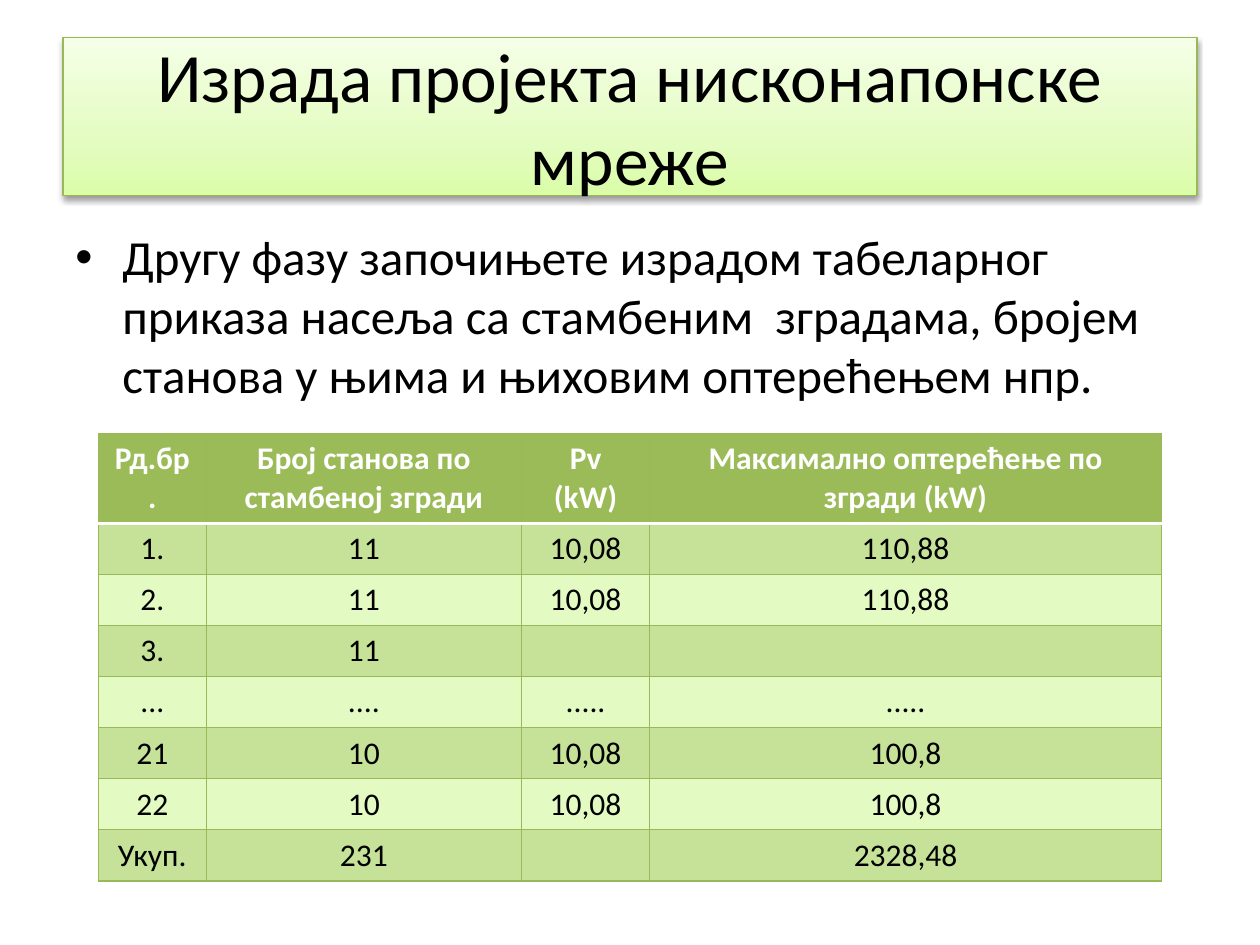
import pptx
import pptx.util
import pptx.oxml
import pptx.dml.color
import pptx.enum.text
import pptx.enum.shapes
from pptx.oxml.ns import nsdecls

Cm, Pt = pptx.util.Cm, pptx.util.Pt
CENTER = pptx.enum.text.PP_ALIGN.CENTER

TITLE = "Израда пројекта нисконапонске мреже"
BODY = ("Другу фазу започињете израдом табеларног приказа насеља са стамбеним  "
        "зградама, бројем станова у њима и њиховим оптерећењем нпр.")
ROWS = [
    ("Рд.бр.", "Број станова по стамбеној згради", "Pv\n(kW)",
     "Максимално оптерећење по згради (kW)"),
    ("1.", "11", "10,08", "110,88"),
    ("2.", "11", "10,08", "110,88"),
    ("3.", "11", "", ""),
    ("...", "....", ".....", "....."),
    ("21", "10", "10,08", "100,8"),
    ("22", "10", "10,08", "100,8"),
    ("Укуп.", "231", "", "2328,48"),
]
COL_WIDTHS = [2.18, 6.35, 2.59, 10.31]
HEADER_HEIGHT, ROW_HEIGHT = 1.81, 1.03

COLORS = {"text": "000000", "white": "FFFFFF", "header": "9BBB59", "line": "98B955",
          "band": "C6E198", "plain": "E3FBC2"}
TITLE_STOPS = [(0, "DAFDA7"), (35, "E4FCC2"), (100, "F5FFE7")]


def rgb(name):
    return pptx.dml.color.RGBColor.from_string(COLORS[name])


def xml(text):
    """Parse one DrawingML element given without its namespace declaration."""
    tag, rest = text.split(" ", 1)
    return pptx.oxml.parse_xml(f"{tag} {nsdecls('a')} {rest}")


def add_run(p, text, size, color="text", bold=False):
    r = p.add_run()
    r.text = text
    r.font.name, r.font.size, r.font.bold = "Calibri", Pt(size), bold
    r.font.color.rgb = rgb(color)


def add_title(slide):
    s = slide.shapes.add_shape(pptx.enum.shapes.MSO_SHAPE.RECTANGLE,
                               Cm(1.27), Cm(0.76), Cm(22.86), Cm(3.18))
    s.line.color.rgb = rgb("line")
    s.line.width = Pt(0.75)
    s.shadow.inherit = False
    stops = "".join(f'<a:gs pos="{pos * 1000}"><a:srgbClr val="{c}"/></a:gs>'
                    for pos, c in TITLE_STOPS)
    s.fill.background()
    no_fill = s._element.spPr.find(pptx.oxml.ns.qn("a:noFill"))
    no_fill.getparent().replace(no_fill, xml(
        f'<a:gradFill rotWithShape="1"><a:gsLst>{stops}</a:gsLst>'
        '<a:lin ang="16200000" scaled="0"/></a:gradFill>'))
    s._element.spPr.find(pptx.oxml.ns.qn("a:effectLst")).append(xml(
        f'<a:outerShdw blurRad="{Pt(3.1)}" dist="{Pt(1.6)}" dir="5400000" rotWithShape="0">'
        '<a:srgbClr val="000000"><a:alpha val="38000"/></a:srgbClr></a:outerShdw>'))
    tf = s.text_frame
    tf.word_wrap = True
    tf.vertical_anchor = pptx.enum.text.MSO_ANCHOR.MIDDLE
    p = tf.paragraphs[0]
    p.alignment = CENTER
    add_run(p, TITLE, 39.6)


def add_body(slide):
    tf = slide.shapes.add_textbox(Cm(1.27), Cm(4.45), Cm(22.86), Cm(12.57)).text_frame
    tf.word_wrap = True
    p = tf.paragraphs[0]
    p.space_before = Pt(5.6)
    pPr = p._p.get_or_add_pPr()
    pPr.set("marL", str(Cm(0.95)))
    pPr.set("indent", str(-Cm(0.95)))
    pPr.append(xml('<a:buFont typeface="Arial"/>'))
    pPr.append(xml('<a:buChar char="•"/>'))
    add_run(p, BODY, 28)


def set_borders(cell, row):
    """Draw thin green lines, with a thick white one under the header row."""
    white_side = {0: "B", 1: "T"}.get(row)
    for i, side in enumerate("LRTB"):
        color, width = ("white", 2) if side == white_side else ("line", 0.75)
        cell._tc.get_or_add_tcPr().insert(i, xml(
            f'<a:ln{side} w="{Pt(width)}"><a:solidFill>'
            f'<a:srgbClr val="{COLORS[color]}"/></a:solidFill></a:ln{side}>'))


def add_load_table(slide):
    heights = [HEADER_HEIGHT] + [ROW_HEIGHT] * (len(ROWS) - 1)
    table = slide.shapes.add_table(len(ROWS), len(COL_WIDTHS), Cm(1.98), Cm(8.74),
                                   Cm(sum(COL_WIDTHS)), Cm(sum(heights))).table
    for column, width in zip(table.columns, COL_WIDTHS):
        column.width = Cm(width)
    for i, (row, height) in enumerate(zip(ROWS, heights)):
        table.rows[i].height = Cm(height)
        fill = "header" if i == 0 else "band" if i % 2 else "plain"
        for j, text in enumerate(row):
            cell = table.cell(i, j)
            cell.fill.solid()
            cell.fill.fore_color.rgb = rgb(fill)
            set_borders(cell, i)
            tf = cell.text_frame
            for k, line in enumerate(text.split("\n")):
                p = tf.add_paragraph() if k else tf.paragraphs[0]
                p.alignment = CENTER
                if line:
                    add_run(p, line, 18, "text" if i else "white", bold=i == 0)


def main():
    prs = pptx.Presentation()
    prs.slide_width, prs.slide_height = Cm(25.4), Cm(19.05)
    slide = prs.slides.add_slide(prs.slide_layouts[6])
    add_title(slide)
    add_body(slide)
    add_load_table(slide)
    prs.save("out.pptx")


if __name__ == "__main__":
    main()
